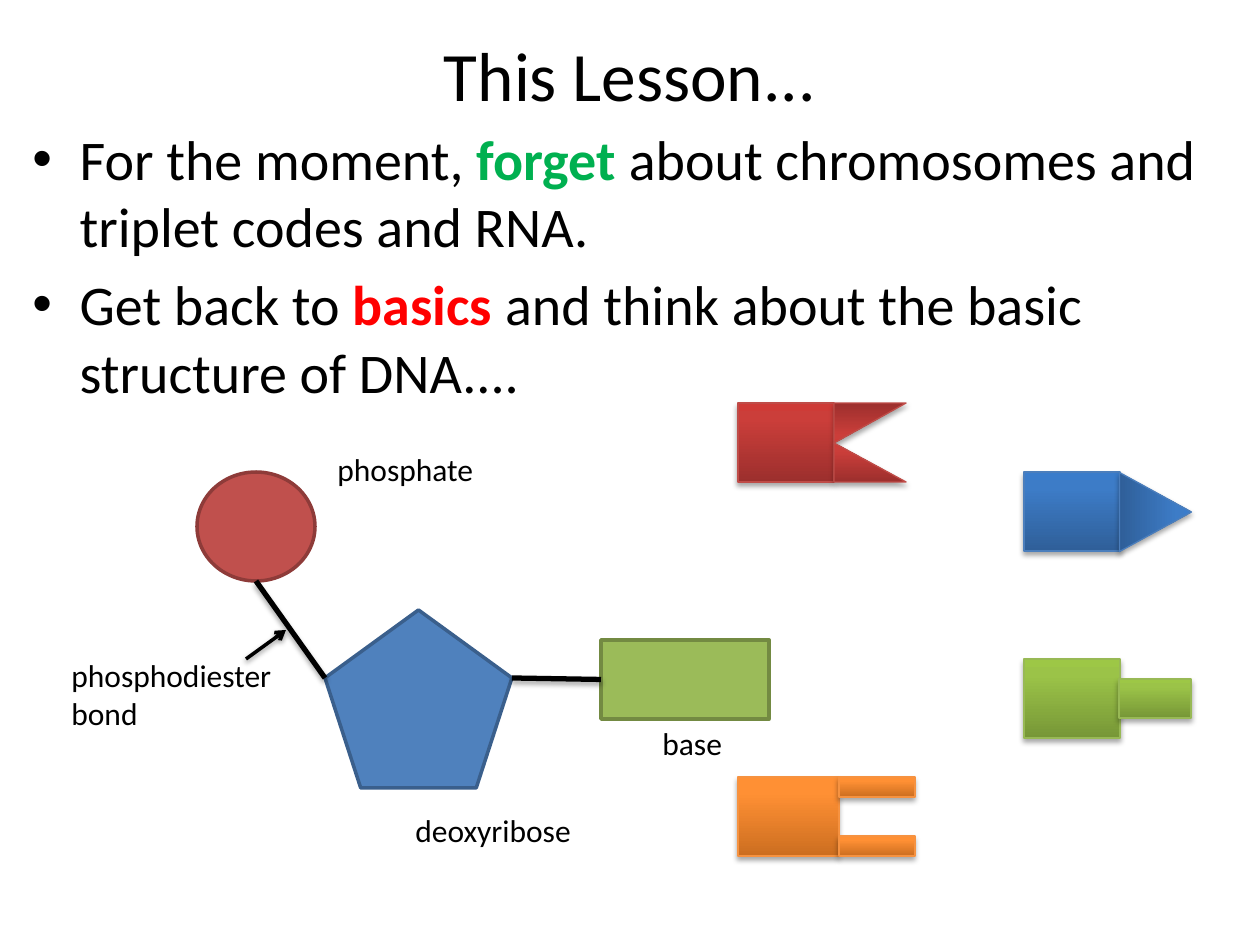
from copy import deepcopy
from dataclasses import dataclass

from lxml.etree import SubElement
from pptx import Presentation
from pptx.dml.color import RGBColor
from pptx.enum.shapes import MSO_CONNECTOR as Line, MSO_SHAPE as Kind
from pptx.enum.text import MSO_ANCHOR as Anchor, MSO_AUTO_SIZE as AutoSize, PP_ALIGN as Align
from pptx.oxml.ns import qn
from pptx.util import Emu, Pt

EMU_PER_PX = 914400 / 126
FONT = "Calibri"
COLORS = {
    "black": "000000", "forget": "00B050", "basics": "FF0000",
    "phosphate": "C0504D", "phosphate edge": "8E3B39",
    "sugar": "4F81BD", "sugar edge": "3A5F8C",
    "base": "9BBB59", "base edge": "738A42",
}
# Bottom, upper and top colours of each gradient, then the outline
GRADIENTS = {
    "blue": ("2F5F99", "3D7CC7", "3A7CCB", "4B7EBC"),
    "green": ("779737", "9BC348", "9DC746", "98B955"),
    "red": ("9C2F2D", "CB3E3A", "CE3B37", "BF4C48"),
    "orange": ("CC6E20", "FF9034", "FF9136", "F69240"),
}
STOPS = (0, 0.8, 1)


@dataclass
class Label:
    lines: list
    left: int
    top: int
    width: int
    height: int


@dataclass
class Piece:
    """One piece of a base symbol, placed from the symbol's corner."""
    kind: Kind
    left: int
    top: int
    width: int
    height: int
    rotation: int = 0
    flips: str = ""


@dataclass
class Symbol:
    color: str
    left: int
    top: int
    pieces: list


LABELS = [
    Label(["phosphate"], 325, 444, 217, 50),
    Label(["deoxyribose"], 403, 805, 217, 50),
    Label(["phosphodiester", "bond"], 59, 650, 246, 89),
    Label(["base"], 650, 718, 217, 50),
]
BLOCK = Piece(Kind.RECTANGLE, 0, 0, 96, 79)
SYMBOLS = [
    Symbol("blue", 1024, 472, [BLOCK, Piece(Kind.ISOSCELES_TRIANGLE, 92, 4, 79, 72, 90)]),
    Symbol("green", 1024, 659, [BLOCK, Piece(Kind.RECTANGLE, 95, 20, 72, 39)]),
    Symbol("red", 738, 403, [
        BLOCK,
        Piece(Kind.RIGHT_TRIANGLE, 96, 0, 72, 40, 180, "H"),
        Piece(Kind.RIGHT_TRIANGLE, 96, 40, 72, 39, 180, "HV"),
    ]),
    Symbol("orange", 738, 777, [
        Piece(Kind.RECTANGLE, 0, 0, 101, 79),
        Piece(Kind.RECTANGLE, 101, 0, 76, 20),
        Piece(Kind.RECTANGLE, 101, 59, 76, 20),
    ]),
]


def px(*lengths: int) -> list:
    return [Emu(round(length * EMU_PER_PX)) for length in lengths]


def rgb(name: str) -> RGBColor:
    return RGBColor.from_string(COLORS.get(name, name))


def add_text(page, bounds, paragraphs, size=18, align=Align.LEFT, anchor=Anchor.TOP,
             bullet=False, space_before=0, grow=False):
    """Each paragraph is a list of (text, colour name) spans; colour means bold."""
    frame = page.shapes.add_textbox(*px(*bounds)).text_frame
    frame.word_wrap = True
    frame.vertical_anchor = anchor
    frame.auto_size = AutoSize.SHAPE_TO_FIT_TEXT if grow else AutoSize.NONE
    for number, spans in enumerate(paragraphs):
        para = frame.add_paragraph() if number else frame.paragraphs[0]
        para.alignment = align
        para.space_before = Pt(space_before)
        if bullet:
            props = para._p.get_or_add_pPr()
            props.set("marL", "342900")
            props.set("indent", "-342900")
            SubElement(props, qn("a:buFont"), typeface="Arial")
            SubElement(props, qn("a:buChar"), char="•")
        for text, color in spans:
            span = para.add_run()
            span.text = text
            span.font.name = FONT
            span.font.size = Pt(size)
            span.font.bold = color != "black"
            span.font.color.rgb = rgb(color)


def add_shadow(props, alpha=35, distance=1.8):
    """Put a soft shadow below the shape or line that owns these properties."""
    effects = props.find(qn("a:effectLst"))
    if effects is None:
        effects = SubElement(props, qn("a:effectLst"))
    shadow = SubElement(effects, qn("a:outerShdw"), blurRad=str(int(Pt(3.1))),
                        dist=str(int(Pt(distance))), dir="5400000", rotWithShape="0")
    color = SubElement(shadow, qn("a:srgbClr"), val=COLORS["black"])
    SubElement(color, qn("a:alpha"), val=str(alpha * 1000))


def add_outlined(page, kind: Kind, bounds, color: str):
    shape = page.shapes.add_shape(kind, *px(*bounds))
    shape.shadow.inherit = False
    shape.fill.solid()
    shape.fill.fore_color.rgb = rgb(color)
    shape.line.color.rgb = rgb(color + " edge")
    shape.line.width = Pt(2)
    return shape


def add_line(page, start, end, width=3, arrow=False, alpha=35, distance=1.8):
    line = page.shapes.add_connector(Line.STRAIGHT, *px(*start, *end))
    line.line.color.rgb = rgb("black")
    line.line.width = Pt(width)
    props = line._element.spPr
    if arrow:
        SubElement(props.find(qn("a:ln")), qn("a:tailEnd"), type="arrow")
    add_shadow(props, alpha, distance)
    return line


def add_symbol(page, symbol: Symbol):
    group = page.shapes.add_group_shape()
    *colors, edge = GRADIENTS[symbol.color]
    for piece in symbol.pieces:
        shape = group.shapes.add_shape(piece.kind, *px(
            symbol.left + piece.left, symbol.top + piece.top, piece.width, piece.height))
        shape.rotation = piece.rotation
        props = shape._element.spPr
        for flip in piece.flips:
            props.find(qn("a:xfrm")).set("flip" + flip, "1")
        fill = shape.fill
        fill.gradient()
        fill.gradient_angle = 90
        stop_list = props.find(".//" + qn("a:gsLst"))
        stop_list.append(deepcopy(stop_list[-1]))
        for stop, position, color in zip(fill.gradient_stops, STOPS, colors):
            stop.position = position
            stop.color.rgb = rgb(color)
        shape.line.color.rgb = rgb(edge)
        shape.line.width = Pt(0.75)
        shape.shadow.inherit = False
        add_shadow(props)


def main():
    deck = Presentation()
    deck.slide_width, deck.slide_height = px(1260, 945)
    page = deck.slides.add_slide(deck.slide_layouts[6])

    add_text(page, (63, 38, 1134, 71), [[("This Lesson...", "black")]], size=39.6,
             align=Align.CENTER, anchor=Anchor.MIDDLE)
    add_text(page, (20, 118, 1221, 798), [
        [("For the moment, ", "black"), ("forget", "forget"),
         (" about chromosomes and triplet codes and RNA.", "black")],
        [("Get back to ", "black"), ("basics", "basics"),
         (" and think about the basic structure of DNA....", "black")],
    ], size=32, bullet=True, space_before=6.4)

    add_outlined(page, Kind.OVAL, (197, 472, 118, 109), "phosphate")
    add_outlined(page, Kind.REGULAR_PENTAGON, (325, 610, 187, 178), "sugar")
    base = add_outlined(page, Kind.RECTANGLE, (601, 640, 168, 79), "base")
    add_line(page, (256, 581), (325, 678))
    add_line(page, (246, 659), (286, 630), width=2, arrow=True, alpha=38, distance=1.6)
    add_line(page, (512, 678), (601, 679)).end_connect(base, 1)

    for label in LABELS:
        add_text(page, (label.left, label.top, label.width, label.height),
                 [[(line, "black")] for line in label.lines], grow=True)
    for symbol in SYMBOLS:
        add_symbol(page, symbol)

    deck.save("out.pptx")


if __name__ == "__main__":
    main()
